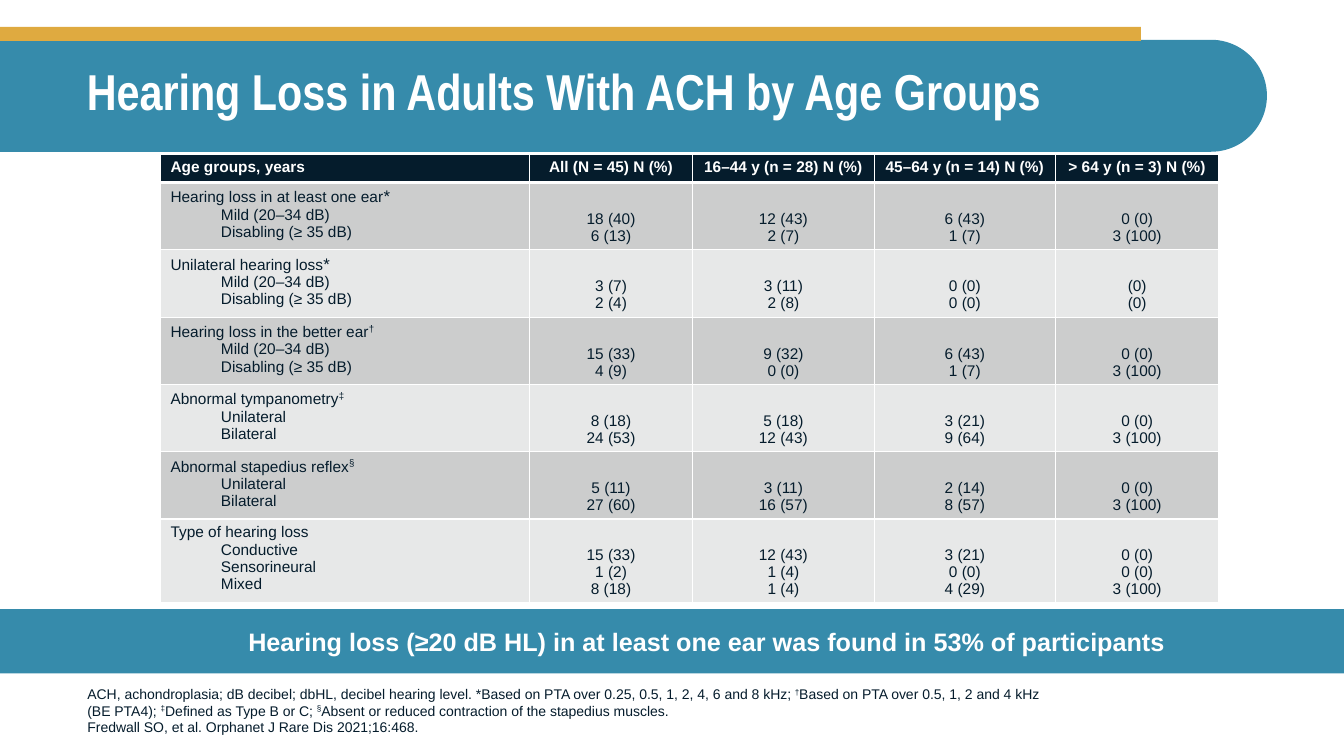
from dataclasses import dataclass

from lxml.etree import SubElement
from pptx import Presentation
from pptx.dml.color import RGBColor
from pptx.enum.shapes import MSO_SHAPE
from pptx.enum.text import MSO_ANCHOR, PP_ALIGN
from pptx.oxml.ns import qn
from pptx.util import Pt

COLORS = {
    "teal": "368BAB",
    "gold": "DFAA40",
    "navy": "051C2C",
    "dark_row": "CCCDCD",
    "light_row": "E7E8E8",
    "white": "FFFFFF",
}
PAGE_WIDTH, PAGE_HEIGHT = 960, 540
COLUMN_WIDTHS = [263.6, 116.6, 129.6, 129.6, 116.6]
HEADER_HEIGHT, LINE_HEIGHT, CELL_PADDING = 19.5, 12.2, 7.2


@dataclass
class Span:
    text: str
    size: float = 11
    color: str = "navy"
    bold: bool = False
    raised: bool = False
    font: str = "Arial"


@dataclass
class Group:
    title: str
    mark: str
    labels: list[str]
    values: list[list[str]]


HEADERS = ["Age groups, years", "All (N = 45) N (%)", "16–44 y (n = 28) N (%)",
           "45–64 y (n = 14) N (%)", "> 64 y (n = 3) N (%)"]
SEVERITY = ["Mild (20–34 dB)", "Disabling (≥ 35 dB)"]
SIDES = ["Unilateral", "Bilateral"]
GROUPS = [
    Group("Hearing loss in at least one ear", "*", SEVERITY,
          [["18 (40)", "6 (13)"], ["12 (43)", "2 (7)"], ["6 (43)", "1 (7)"], ["0 (0)", "3 (100)"]]),
    Group("Unilateral hearing loss", "*", SEVERITY,
          [["3 (7)", "2 (4)"], ["3 (11)", "2 (8)"], ["0 (0)", "0 (0)"], ["(0)", "(0)"]]),
    Group("Hearing loss in the better ear", "†", SEVERITY,
          [["15 (33)", "4 (9)"], ["9 (32)", "0 (0)"], ["6 (43)", "1 (7)"], ["0 (0)", "3 (100)"]]),
    Group("Abnormal tympanometry", "‡", SIDES,
          [["8 (18)", "24 (53)"], ["5 (18)", "12 (43)"], ["3 (21)", "9 (64)"], ["0 (0)", "3 (100)"]]),
    Group("Abnormal stapedius reflex", "§", SIDES,
          [["5 (11)", "27 (60)"], ["3 (11)", "16 (57)"], ["2 (14)", "8 (57)"], ["0 (0)", "3 (100)"]]),
    Group("Type of hearing loss", "", ["Conductive", "Sensorineural", "Mixed"],
          [["15 (33)", "1 (2)", "8 (18)"], ["12 (43)", "1 (4)", "1 (4)"],
           ["3 (21)", "0 (0)", "4 (29)"], ["0 (0)", "0 (0)", "3 (100)"]]),
]
FOOTNOTE = [
    Span("ACH, achondroplasia; dB decibel; dbHL, decibel hearing level. "
         "*Based on PTA over 0.25, 0.5, 1, 2, 4, 6 and 8 kHz; ", 10),
    Span("†", 10, raised=True),
    Span("Based on PTA over 0.5, 1, 2 and 4 kHz (BE PTA4); ", 10),
    Span("‡", 10, raised=True),
    Span("Defined as Type B or C; ", 10),
    Span("§", 10, raised=True),
    Span("Absent or reduced contraction of the stapedius muscles.", 10),
]
CITATION = Span("Fredwall SO, et al. Orphanet J Rare Dis 2021;16:468.", 10)


def rgb(name: str) -> RGBColor:
    return RGBColor.from_string(COLORS[name])


def write(para, spans: list[Span]) -> None:
    for item in spans:
        span = para.add_run()
        span.text = item.text
        span.font.name = item.font
        span.font.size = Pt(item.size)
        span.font.bold = item.bold
        span.font.color.rgb = rgb(item.color)
        if item.raised:
            span.font._element.set("baseline", "30000")


def indent(para, left: float) -> None:
    properties = para._p.get_or_add_pPr()
    properties.set("marL", str(Pt(left)))
    properties.set("indent", "0")


def add_block(page, kind, left: float, top: float, width: float, height: float, color: str):
    block = page.shapes.add_shape(kind, Pt(left), Pt(top), Pt(width), Pt(height))
    block.shadow.inherit = False
    block.fill.solid()
    block.fill.fore_color.rgb = rgb(color)
    block.line.fill.background()
    return block


def add_text(page, left: float, top: float, width: float, height: float, anchor):
    box = page.shapes.add_textbox(Pt(left), Pt(top), Pt(width), Pt(height))
    box.text_frame.word_wrap = True
    box.text_frame.vertical_anchor = anchor
    return box.text_frame.paragraphs[0]


def style_cell(cell, color: str, top: float, bottom: float) -> None:
    properties = cell._tc.get_or_add_tcPr()
    for side, width in {"L": 1, "R": 1, "T": top, "B": bottom}.items():
        line = SubElement(properties, qn(f"a:ln{side}"), w=str(Pt(width)))
        fill = SubElement(line, qn("a:solidFill"))
        SubElement(fill, qn("a:srgbClr"), val=COLORS["white"])
    cell.fill.solid()
    cell.fill.fore_color.rgb = rgb(color)


def fill_cell(cell, lines: list[list[Span]], centered: bool, indented: bool = False) -> None:
    frame = cell.text_frame
    for index, spans in enumerate(lines):
        para = frame.add_paragraph() if index else frame.paragraphs[0]
        if centered:
            para.alignment = PP_ALIGN.CENTER
        if indented and index:
            para.level = 1
            indent(para, 36)
        write(para, spans)


def add_results(page) -> None:
    heights = [HEADER_HEIGHT]
    for group in GROUPS:
        mark_extra = 1.2 if group.mark else 0
        heights.append(CELL_PADDING + LINE_HEIGHT * (1 + len(group.labels)) + mark_extra)
    table = page.shapes.add_table(len(heights), len(HEADERS), Pt(114.6), Pt(110),
                                  Pt(sum(COLUMN_WIDTHS)), Pt(sum(heights))).table
    for column, width in zip(table.columns, COLUMN_WIDTHS):
        column.width = Pt(width)
    for row, height in zip(table.rows, heights):
        row.height = Pt(height)

    for column, header in enumerate(HEADERS):
        cell = table.cell(0, column)
        style_cell(cell, "navy", 1, 3)
        fill_cell(cell, [[Span(header, color="white", bold=True)]], column > 0)

    for row, group in enumerate(GROUPS, start=1):
        color = "dark_row" if row % 2 else "light_row"
        for column in range(len(HEADERS)):
            style_cell(table.cell(row, column), color, 3 if row == 1 else 1, 1)
        title = [Span(group.title)]
        if group.mark:
            title.append(Span(group.mark, 12, raised=group.mark != "*"))
        fill_cell(table.cell(row, 0), [title] + [[Span(label)] for label in group.labels], False, True)
        for column, values in enumerate(group.values, start=1):
            cell = table.cell(row, column)
            cell.vertical_anchor = MSO_ANCHOR.BOTTOM
            fill_cell(cell, [[Span(value)] for value in values], True)


def main() -> None:
    deck = Presentation()
    deck.slide_width, deck.slide_height = Pt(PAGE_WIDTH), Pt(PAGE_HEIGHT)
    page = deck.slides.add_slide(deck.slide_layouts[6])

    # Title banner, turned so its round end points right
    length, thickness, middle = 905, 80, 68.4
    banner = add_block(page, MSO_SHAPE.ROUND_2_SAME_RECTANGLE, (length - thickness) / 2,
                       middle - length / 2, thickness, length, "teal")
    banner.rotation = 270
    banner.adjustments[0], banner.adjustments[1] = 0, 0.5
    add_block(page, MSO_SHAPE.RECTANGLE, 0, 19.2, 815, 10, "gold")
    title = add_text(page, 54.9, 28, 850, 79.2, MSO_ANCHOR.MIDDLE)
    title.line_spacing = 0.9
    write(title, [Span("Hearing Loss in Adults With ACH by Age Groups", 36, "white", True,
                       font="Arial Narrow")])

    # Results table
    add_results(page)

    # Key message
    band = add_block(page, MSO_SHAPE.RECTANGLE, 0, 435, PAGE_WIDTH, 46, "teal")
    frame = band.text_frame
    frame.word_wrap = True
    frame.vertical_anchor = MSO_ANCHOR.MIDDLE
    frame.margin_left = frame.margin_right = Pt(57)
    message = frame.paragraphs[0]
    message.alignment = PP_ALIGN.CENTER
    indent(message, 49.7)
    write(message, [Span("Hearing loss (≥20 dB HL) in at least one ear was found in 53% of participants",
                         18, "white", True)])

    # Footnote and citation
    note = add_text(page, 55.3, 483, 711.4, 46.1, MSO_ANCHOR.BOTTOM)
    write(note, FOOTNOTE)
    note.add_line_break()
    write(note, [CITATION])

    deck.save("out.pptx")


if __name__ == "__main__":
    main()
